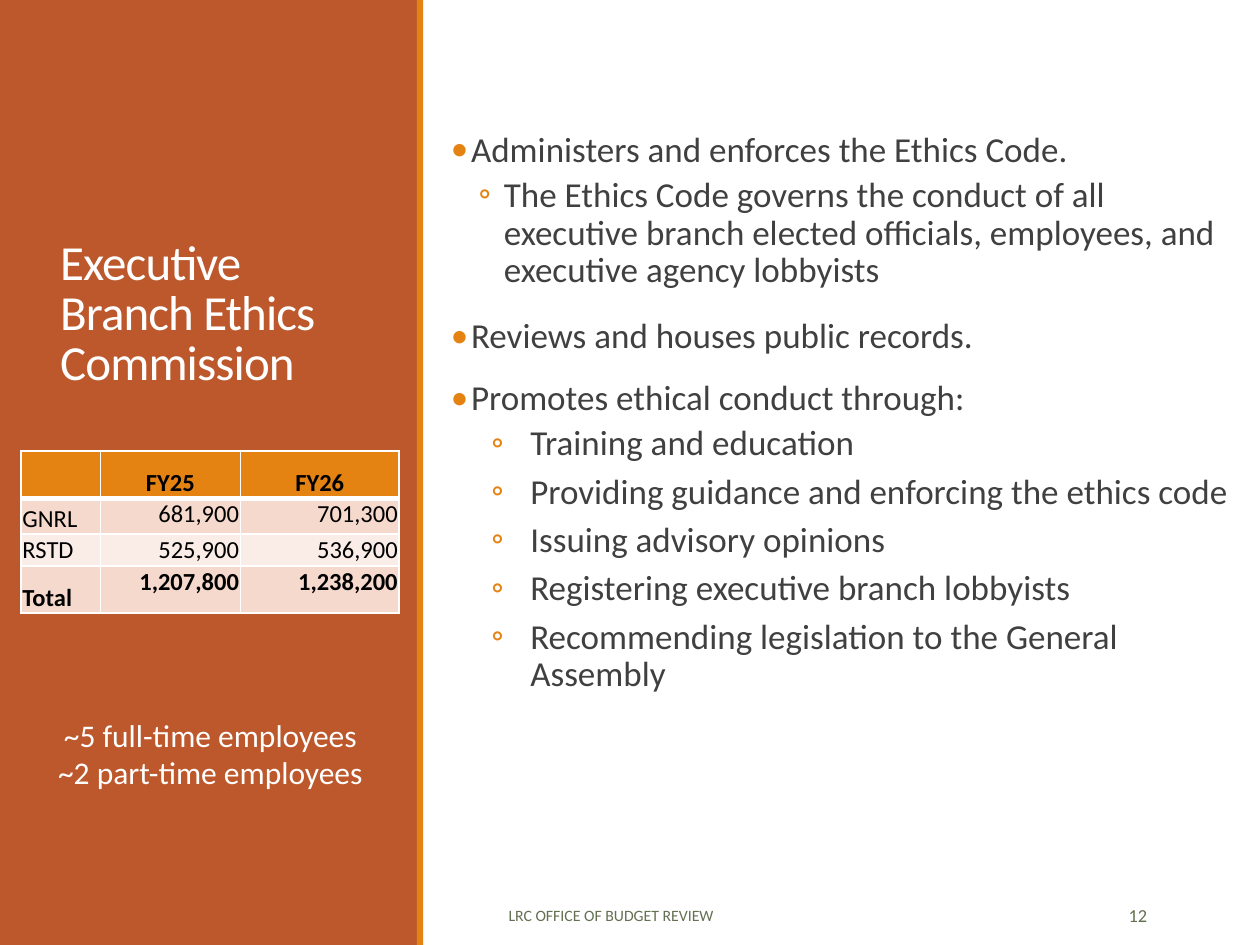
from dataclasses import dataclass

from lxml import etree
from pptx import Presentation, util as u
from pptx.dml.color import RGBColor
from pptx.enum import shapes, text
from pptx.oxml.ns import qn

COLORS = {
    "panel": "BD582C", "accent": "E48312", "white": "FFFFFF", "black": "000000",
    "body": "404040", "footer": "637052", "band": "F5D9CC", "light_band": "FAEDE7",
}
FONT = "Calibri"
LEFT, CENTER, RIGHT = (text.PP_ALIGN.LEFT, text.PP_ALIGN.CENTER, text.PP_ALIGN.RIGHT)
TOP, MIDDLE, BOTTOM = (text.MSO_ANCHOR.TOP, text.MSO_ANCHOR.MIDDLE, text.MSO_ANCHOR.BOTTOM)

BULLET_STYLES = {
    "main": {"char": "•", "margin": 0.16, "hang": 0.16, "before": 12, "after": 2},
    "detail": {"char": "◦", "margin": 0.42, "hang": 0.2, "before": 2, "after": 4},
    "item": {"char": "◦", "margin": 0.63, "hang": 0.31, "before": 2, "after": 4},
}
BULLETS = [
    ("main", "Administers and enforces the Ethics Code."),
    ("detail", "The Ethics Code governs the conduct of all executive branch elected "
               "officials, employees, and executive agency lobbyists"),
    ("main", "Reviews and houses public records."),
    ("main", "Promotes ethical conduct through:"),
    ("item", "Training and education"),
    ("item", "Providing guidance and enforcing the ethics code"),
    ("item", "Issuing advisory opinions"),
    ("item", "Registering executive branch lobbyists"),
    ("item", "Recommending legislation to the General Assembly"),
]
BUDGET = [
    ("", "FY25", "FY26"),
    ("GNRL", "681,900", "701,300"),
    ("RSTD", "525,900", "536,900"),
    ("Total", "1,207,800", "1,238,200"),
]


@dataclass
class Box:
    left: float
    top: float
    width: float
    height: float

    def inner(self, left, top, width, height):
        """Return an inner box given in percent of this one."""
        return Box(self.left + self.width * left / 100, self.top + self.height * top / 100,
                   self.width * width / 100, self.height * height / 100)

    def emu(self):
        return [u.Inches(v) for v in (self.left, self.top, self.width, self.height)]


def rgb(name):
    return RGBColor.from_string(COLORS[name])


def set_attributes(target, values):
    for name, value in values.items():
        setattr(target, name, value)


def write(paragraph, words, size, color, align=LEFT, bold=False):
    paragraph.alignment = align
    run = paragraph.add_run()
    run.text = words
    set_attributes(run.font, {"name": FONT, "size": u.Pt(size), "bold": bold})
    run.font.color.rgb = rgb(color)


def add_bar(slide, box, color):
    bar = slide.shapes.add_shape(shapes.MSO_SHAPE.RECTANGLE, *box.emu())
    bar.shadow.inherit = False
    bar.fill.solid()
    bar.fill.fore_color.rgb = rgb(color)
    bar.line.fill.background()


def add_text(slide, box, lines, size, color, align=LEFT, anchor=TOP):
    frame = slide.shapes.add_textbox(*box.emu()).text_frame
    set_attributes(frame, {"word_wrap": True, "vertical_anchor": anchor})
    for index, line in enumerate(lines):
        paragraph = frame.add_paragraph() if index else frame.paragraphs[0]
        write(paragraph, line, size, color, align)
    return frame


def set_bullet(paragraph, char, margin, hang, before, after):
    set_attributes(paragraph, {"line_spacing": 0.9, "space_before": u.Pt(before),
                               "space_after": u.Pt(after)})
    properties = paragraph._p.get_or_add_pPr()
    properties.set("marL", str(u.Inches(margin)))
    properties.set("indent", str(-u.Inches(hang)))
    color = etree.SubElement(properties, qn("a:buClr"))
    etree.SubElement(color, qn("a:srgbClr"), val=COLORS["accent"])
    etree.SubElement(properties, qn("a:buFont"), typeface=FONT)
    etree.SubElement(properties, qn("a:buChar"), char=char)


def set_borders(cell, widths):
    """Draw white borders; widths maps L, R, T and B to points."""
    properties = cell._tc.get_or_add_tcPr()
    for side, width in widths.items():
        line = etree.SubElement(properties, qn(f"a:ln{side}"), w=str(u.Pt(width)))
        fill = etree.SubElement(line, qn("a:solidFill"))
        etree.SubElement(fill, qn("a:srgbClr"), val=COLORS["white"])


def add_budget_table(slide, box):
    table = slide.shapes.add_table(len(BUDGET), len(BUDGET[0]), *box.emu()).table
    set_attributes(table, {"first_row": False, "horz_banding": False})
    for column, share in zip(table.columns, (0.21, 0.37, 0.42)):
        column.width = u.Inches(box.width * share)
    for row, share in zip(table.rows, (0.29, 0.22, 0.2, 0.29)):
        row.height = u.Inches(box.height * share)
    fills = ("accent", "band", "light_band", "band")
    last = len(BUDGET) - 1
    inset = u.Inches(0.01)
    for r, values in enumerate(BUDGET):
        for c, value in enumerate(values):
            cell = table.cell(r, c)
            low = r == 0 or (c == 0 and r != 2)
            set_attributes(cell, {
                "margin_left": inset, "margin_right": inset, "margin_top": inset,
                "margin_bottom": 0, "vertical_anchor": BOTTOM if low else TOP})
            set_borders(cell, {"L": 1, "R": 1, "T": 3 if r == 1 else 1, "B": 3 if r == 0 else 1})
            cell.fill.solid()
            cell.fill.fore_color.rgb = rgb(fills[r])
            if value:
                align = CENTER if r == 0 else RIGHT if c else LEFT
                write(cell.text_frame.paragraphs[0], value, 14, "black", align, r in (0, last))


def add_side_panel(slide, box):
    add_bar(slide, box.inner(0, 0, 98.8, 100), "panel")
    add_bar(slide, box.inner(98.5, 0, 1.5, 100), "accent")
    title = add_text(slide, box.inner(11.3, 8.67, 78, 33.33),
                     ["Executive Branch Ethics Commission"], 28, "white", anchor=BOTTOM)
    title.paragraphs[0].line_spacing = 0.85
    title.paragraphs[0].runs[0].font._element.set("spc", "-50")
    add_budget_table(slide, box.inner(5, 47.75, 89.3, 17.15))
    add_text(slide, box.inner(10.1, 75.07, 79.2, 9.47),
             ["~5 full-time employees", "~2 part-time employees"], 18, "white", CENTER)


def add_content(slide, box):
    styles, lines = zip(*BULLETS)
    frame = add_text(slide, box.inner(3.3, 13.33, 92.9, 74.4), lines, 20, "body")
    set_attributes(frame, {"margin_left": 0, "margin_right": 0})
    for paragraph, style in zip(frame.paragraphs, styles):
        set_bullet(paragraph, **BULLET_STYLES[style])
    add_text(slide, box.inner(8.7, 94.13, 57.4, 5.33),
             ["LRC OFFICE OF BUDGET REVIEW"], 9, "footer", anchor=MIDDLE)
    add_text(slide, box.inner(71.7, 94.13, 16.3, 5.33), ["12"], 10.5, "footer", RIGHT, MIDDLE)


def main():
    presentation = Presentation()
    page = Box(0, 0, 10, 7.5)
    presentation.slide_width = u.Inches(page.width)
    presentation.slide_height = u.Inches(page.height)
    slide = presentation.slides.add_slide(presentation.slide_layouts[6])
    add_side_panel(slide, page.inner(0, 0, 33.6, 100))
    add_content(slide, page.inner(33.6, 0, 66.4, 100))
    presentation.save("out.pptx")


if __name__ == "__main__":
    main()
